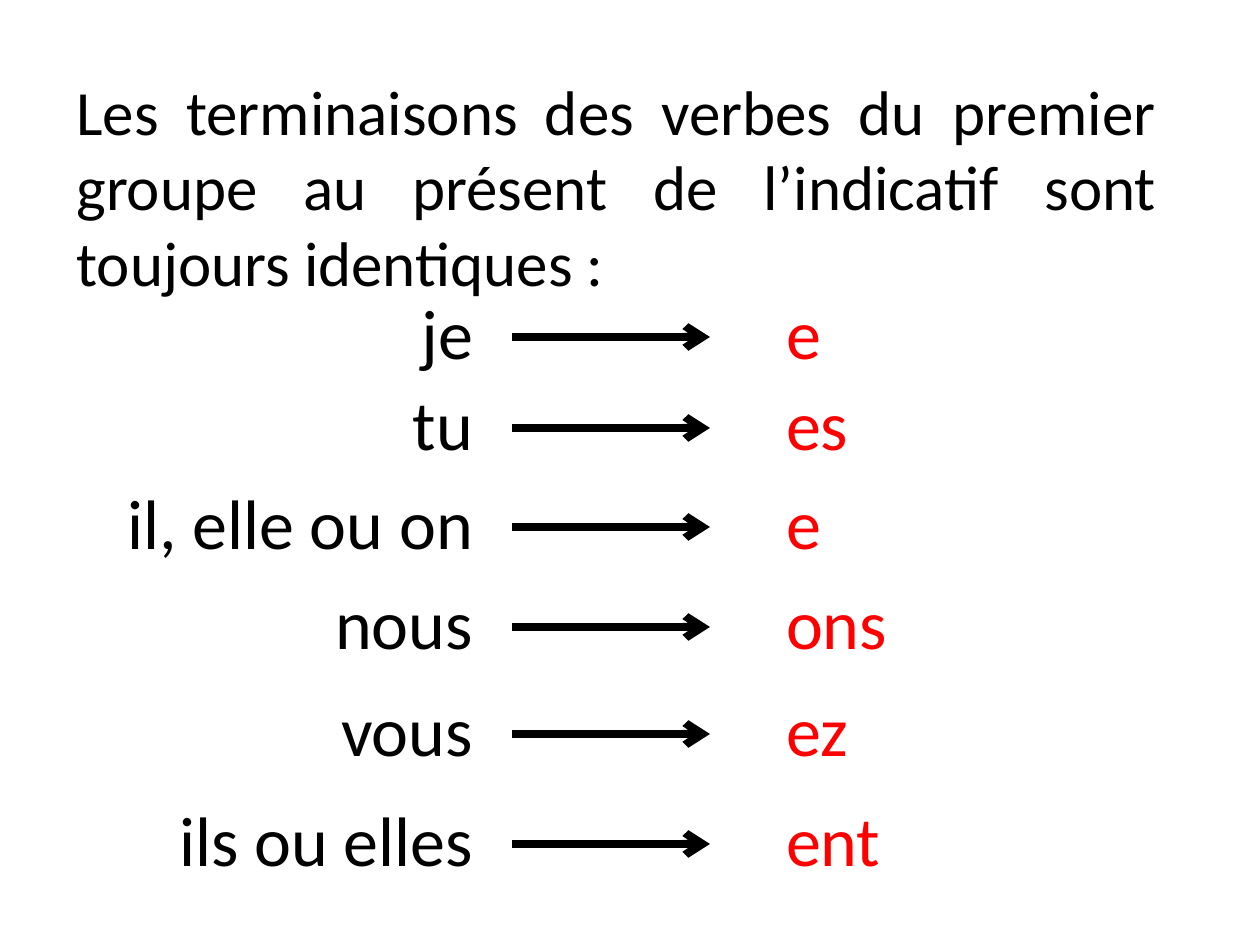
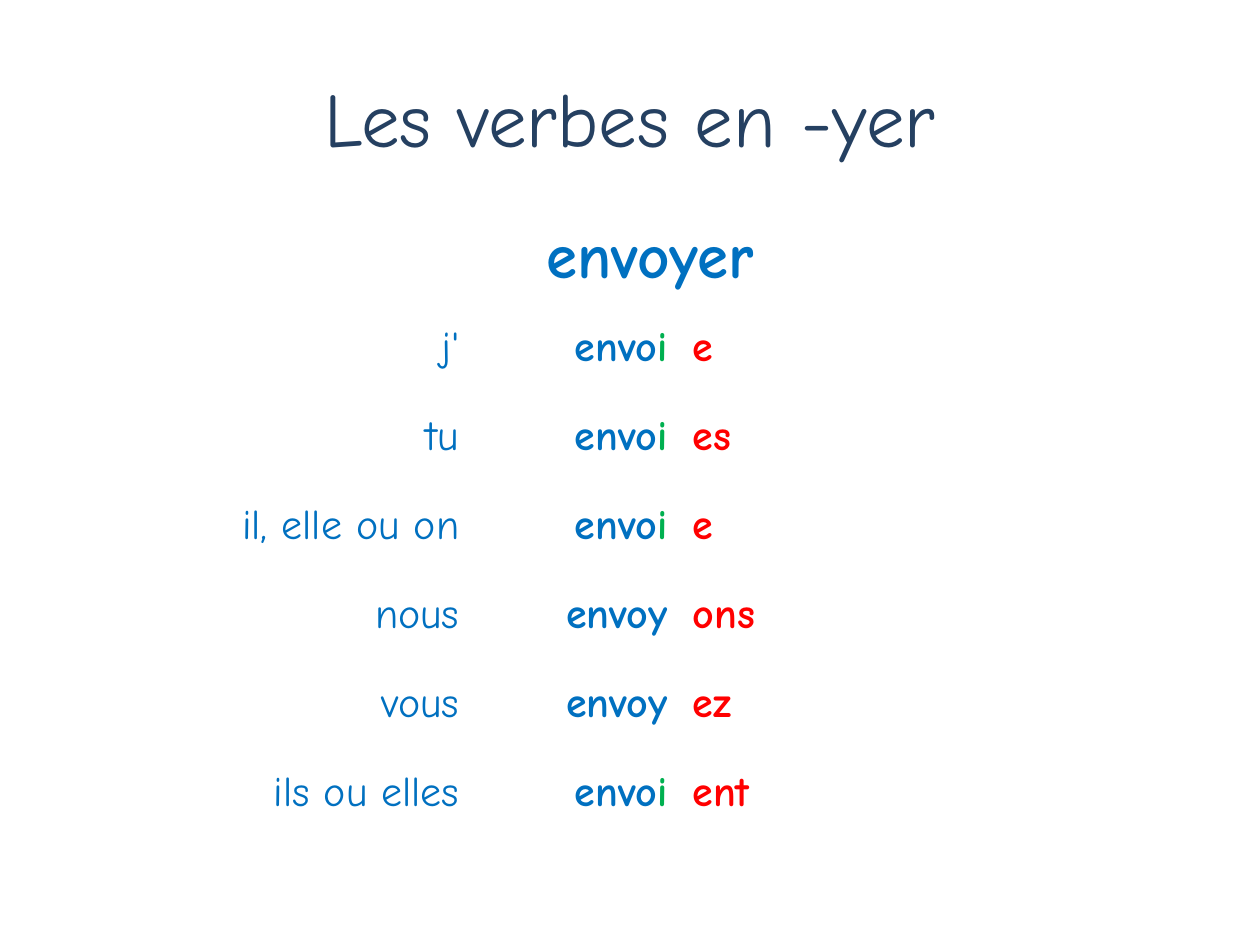
from lxml import etree
from pptx import Presentation
from pptx import util as u
from pptx.dml.color import RGBColor
from pptx.enum import shapes, text
from pptx.oxml import ns

SCALE = 914400 / 126
BLACK = RGBColor(0x00, 0x00, 0x00)
WHITE = RGBColor(0xFF, 0xFF, 0xFF)
RED = RGBColor(0xFF, 0x00, 0x00)
BLUE = RGBColor(0x00, 0x70, 0xC0)
GREEN = RGBColor(0x00, 0xB0, 0x50)
NAVY = RGBColor(0x25, 0x40, 0x61)
RULE_FONT = "Calibri"
VERB_FONT = "Comic Neue"
LEFT, CENTER = text.PP_ALIGN.LEFT, text.PP_ALIGN.CENTER
RIGHT, JUSTIFY = text.PP_ALIGN.RIGHT, text.PP_ALIGN.JUSTIFY

ENDINGS = ["e", "es", "e", "ons", "ez", "ent"]
SUBJECTS = ["tu", "il, elle ou on", "nous", "vous", "ils ou elles"]
RULE_TOPS = [283, 374, 473, 573, 680, 790]
STEMS = [("envo", "i")] * 3 + [("envoy", "")] * 2 + [("envo", "i")]


def px(length):
    return u.Emu(round(length * SCALE))


def add_run(paragraph, words, font_name, size, color, bold=False):
    run = paragraph.add_run()
    run.text = words
    run.font.name = font_name
    run.font.size = u.Pt(size)
    run.font.bold = bold
    run.font.color.rgb = color


def add_text_box(parent, left, top, width, height, alignment=LEFT):
    box = parent.shapes.add_textbox(px(left), px(top), px(width), px(height))
    box.text_frame.word_wrap = True
    box.text_frame.paragraphs[0].alignment = alignment
    return box.text_frame


def add_tab_stops(paragraph, stops):
    properties = paragraph._p.get_or_add_pPr()
    tab_list = etree.SubElement(properties, ns.qn("a:tabLst"))
    for position, alignment in stops:
        etree.SubElement(tab_list, ns.qn("a:tab"), pos=str(px(position)), algn=alignment)


def add_arrow(parent, left, right, y):
    arrow = parent.shapes.add_connector(
        shapes.MSO_CONNECTOR.STRAIGHT, px(left), px(y), px(right), px(y))
    arrow.line.color.rgb = BLACK
    arrow.line.width = u.Pt(4.5)
    properties = arrow._element.spPr
    etree.SubElement(properties.find(ns.qn("a:ln")), ns.qn("a:tailEnd"), type="arrow")
    etree.SubElement(properties, ns.qn("a:effectLst"))


def add_ending_row(slide, top, subject, ending):
    group = slide.shapes.add_group_shape()
    frame = add_text_box(group, 115, top, 963, 97)
    frame.margin_left = 0
    frame.auto_size = text.MSO_AUTO_SIZE.SHAPE_TO_FIT_TEXT
    paragraph = frame.paragraphs[0]
    add_tab_stops(paragraph, [(358, "r"), (671, "l")])
    add_run(paragraph, f"\t{subject}\t", RULE_FONT, 40, BLACK)
    add_run(paragraph, ending, RULE_FONT, 40, RED)
    add_arrow(group, 512, 710, top + 54)


def fill_cell(cell, alignment, runs, size=24):
    cell.fill.solid()
    cell.fill.fore_color.rgb = WHITE
    cell.vertical_anchor = text.MSO_ANCHOR.MIDDLE
    paragraph = cell.text_frame.paragraphs[0]
    paragraph.alignment = alignment
    for words, color, bold in runs:
        if words:
            add_run(paragraph, words, VERB_FONT, size, color, bold)


def add_verb_table(slide, verb, rows):
    widths = [318, 208, 466]
    row_height = 89
    row_count = len(rows) + 1
    table = slide.shapes.add_table(
        row_count, len(widths), px(154), px(214),
        px(sum(widths)), px(row_height * row_count)).table
    for column, width in zip(table.columns, widths):
        column.width = px(width)
    for row in table.rows:
        row.height = px(row_height)
    table.cell(0, 0).merge(table.cell(0, 2))
    fill_cell(table.cell(0, 0), CENTER, [(verb, BLUE, True)], 36)
    for index, (subject, (stem, changed), ending) in enumerate(rows, 1):
        fill_cell(table.cell(index, 0), RIGHT, [(subject, BLUE, False)])
        fill_cell(table.cell(index, 1), RIGHT, [(stem, BLUE, True), (changed, GREEN, True)])
        fill_cell(table.cell(index, 2), LEFT, [(ending, RED, True)])


def build_endings_slide(slide):
    frame = add_text_box(slide, 64, 66, 1105, 218, JUSTIFY)
    add_run(frame.paragraphs[0],
            "Les terminaisons des verbes du premier groupe au présent "
            "de l’indicatif sont toujours identiques :", RULE_FONT, 36, BLACK)
    for top, subject, ending in zip(RULE_TOPS, ["je"] + SUBJECTS, ENDINGS):
        add_ending_row(slide, top, subject, ending)


def build_verb_slide(slide):
    frame = add_text_box(slide, 63, 38, 1134, 158, CENTER)
    frame.vertical_anchor = text.MSO_ANCHOR.MIDDLE
    add_run(frame.paragraphs[0], "Les verbes en -yer", VERB_FONT, 44, NAVY)
    add_verb_table(slide, "envoyer", list(zip(["j'"] + SUBJECTS, STEMS, ENDINGS)))


def main():
    presentation = Presentation()
    presentation.slide_width = px(1260)
    presentation.slide_height = px(945)
    for build in (build_endings_slide, build_verb_slide):
        build(presentation.slides.add_slide(presentation.slide_layouts[6]))
    presentation.save("out.pptx")


if __name__ == "__main__":
    main()
